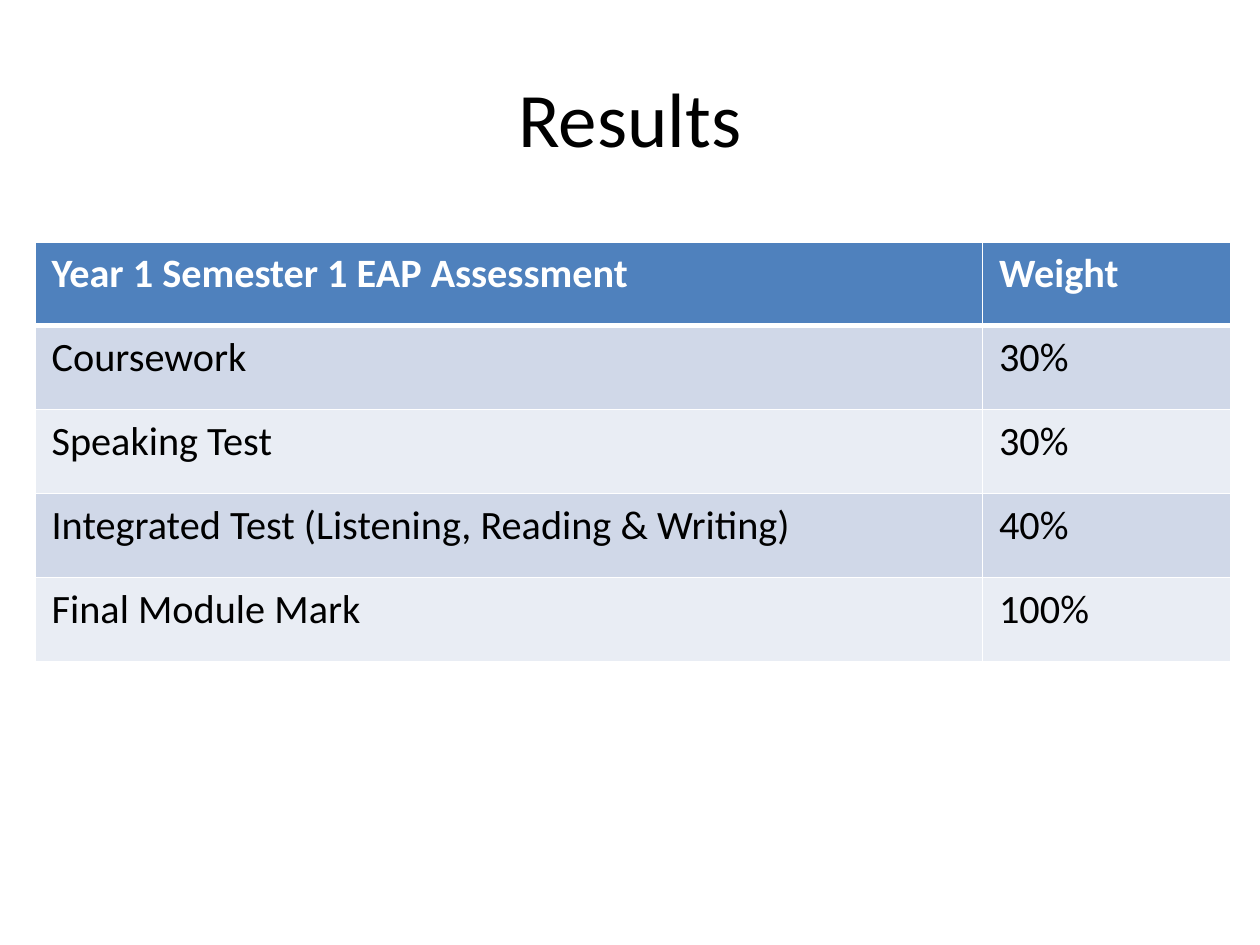
from lxml import etree
from pptx import Presentation
from pptx.dml.color import RGBColor
from pptx.enum.text import MSO_ANCHOR, PP_ALIGN
from pptx.oxml.ns import qn
from pptx.util import Inches, Pt

CENTER = PP_ALIGN.CENTER
LEFT = PP_ALIGN.LEFT
MIDDLE = MSO_ANCHOR.MIDDLE
TITLE_ONLY = 5
FONT = "Calibri"
BLACK, WHITE = "000000", "FFFFFF"
HEADER_FILL = "4F81BD"
BAND_FILLS = ("D0D8E8", "E9EDF4")
COLUMN_WIDTHS = (7.52, 1.97)
ROW_HEIGHT = 0.666
ASSESSMENTS = (
    ("Year 1 Semester 1 EAP Assessment", "Weight"),
    ("Coursework", "30%"),
    ("Speaking Test", "30%"),
    ("Integrated Test (Listening, Reading & Writing)", "40%"),
    ("Final Module Mark", "100%"),
)


def color(value):
    """Return the colour for a hex string."""
    return RGBColor.from_string(value)


def write_text(text_frame, text, size=23, fill=BLACK, bold=False, align=LEFT):
    """Write one formatted paragraph into a text frame."""
    paragraph = text_frame.paragraphs[0]
    paragraph.alignment = align
    run = paragraph.add_run()
    run.text = text
    run.font.name = FONT
    run.font.size = Pt(size)
    run.font.bold = bold
    run.font.color.rgb = color(fill)


def add_title(slide, text):
    """Place and fill the title placeholder."""
    title = slide.shapes.title
    title.left, title.top = Inches(0.5), Inches(0.3)
    title.width, title.height = Inches(9), Inches(1.25)
    title.text_frame.vertical_anchor = MIDDLE
    write_text(title.text_frame, text, size=44, align=CENTER)


def set_borders(cell, **widths):
    """Draw white cell borders with widths in points by side."""
    properties = cell._tc.get_or_add_tcPr()
    for side, width in widths.items():
        line = etree.SubElement(properties, qn(f"a:ln{side}"), w=str(Pt(width)))
        solid = etree.SubElement(line, qn("a:solidFill"))
        etree.SubElement(solid, qn("a:srgbClr"), val=WHITE)


def format_cell(cell, text, row):
    """Format a cell as header or banded body according to its row."""
    header = row == 0
    cell.margin_left = cell.margin_right = Inches(0.13)
    cell.margin_top = cell.margin_bottom = Inches(0.06)
    set_borders(cell, L=1, R=1, T=3 if row == 1 else 1, B=3 if header else 1)
    cell.fill.solid()
    cell.fill.fore_color.rgb = color(HEADER_FILL if header else BAND_FILLS[(row - 1) % 2])
    write_text(cell.text_frame, text, fill=WHITE if header else BLACK, bold=header)


def add_assessment_table(slide, rows):
    """Add the table of assessments and their weights."""
    frame = slide.shapes.add_table(
        len(rows), len(COLUMN_WIDTHS), Inches(0.28), Inches(1.92),
        Inches(sum(COLUMN_WIDTHS)), Inches(ROW_HEIGHT * len(rows)))
    table = frame.table
    for column, width in zip(table.columns, COLUMN_WIDTHS):
        column.width = Inches(width)
    for row, texts in enumerate(rows):
        table.rows[row].height = Inches(ROW_HEIGHT)
        for column, text in enumerate(texts):
            format_cell(table.cell(row, column), text, row)


def main():
    """Build and save the results slide."""
    presentation = Presentation()
    presentation.slide_width, presentation.slide_height = Inches(10), Inches(7.5)
    slide = presentation.slides.add_slide(presentation.slide_layouts[TITLE_ONLY])
    add_title(slide, "Results")
    add_assessment_table(slide, ASSESSMENTS)
    presentation.save("out.pptx")


if __name__ == "__main__":
    main()
